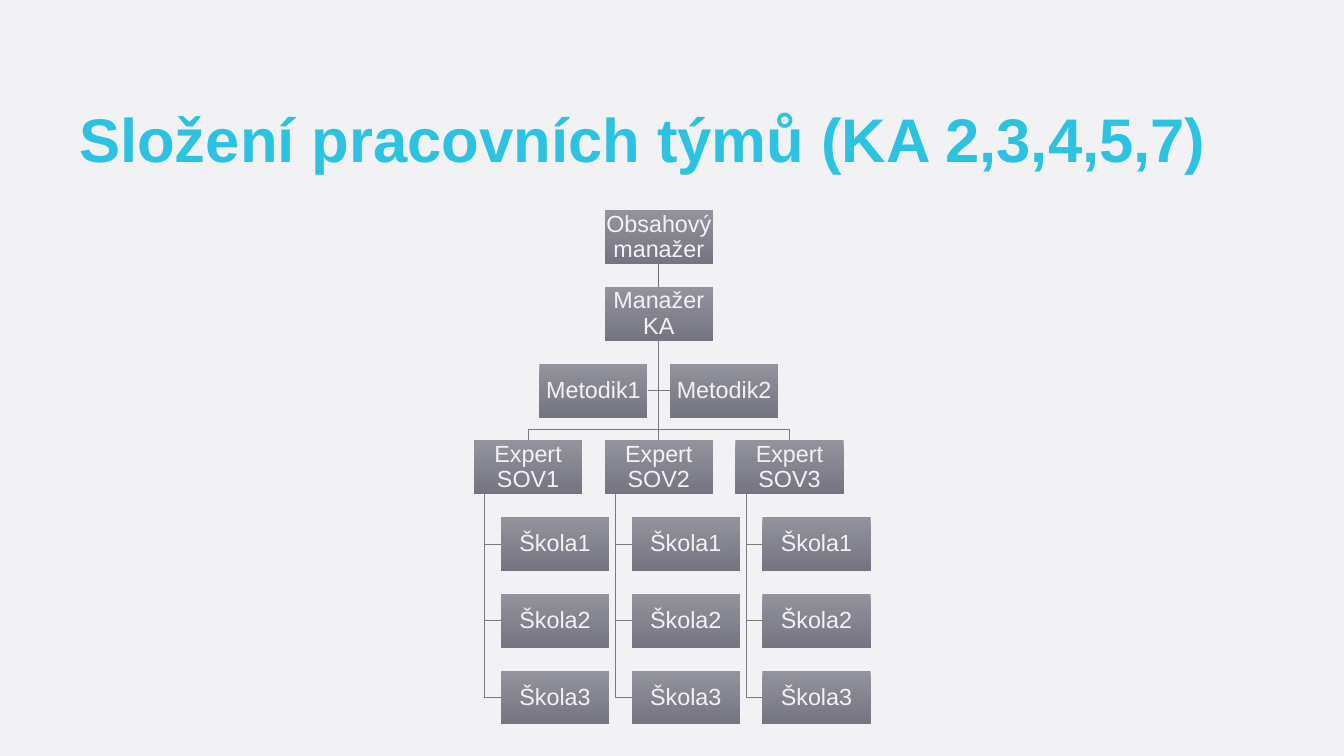
import pptx
import pptx.dml.color
import pptx.enum.shapes
import pptx.enum.text
import pptx.oxml.xmlchemy
import pptx.util
from pptx.util import Cm, Pt

COLORS = {
    "background": "F2F2F5",
    "title": "2BC3E1",
    "box_top": "93939D",
    "box_bottom": "757582",
    "box_text": "F2F2F5",
    "line": "797984",
    "top_line": "6B6B74",
}
ALIGN = pptx.enum.text.PP_ALIGN
ANCHOR = pptx.enum.text.MSO_ANCHOR

TITLE_FRAME = {
    "word_wrap": True, "vertical_anchor": ANCHOR.TOP,
    "margin_left": Cm(0.46), "margin_right": Cm(0.46),
    "margin_top": Cm(0.23), "margin_bottom": Cm(0.23),
}
BOX_FRAME = {
    "word_wrap": True, "vertical_anchor": ANCHOR.MIDDLE,
    "margin_left": Cm(0.04), "margin_right": Cm(0.04),
    "margin_top": Cm(0.04), "margin_bottom": Cm(0.04),
}
TITLE_PARAGRAPH = {"alignment": ALIGN.LEFT, "line_spacing": 0.9}
BOX_PARAGRAPH = {"alignment": ALIGN.CENTER, "line_spacing": 0.9}
TITLE_FONT = {"name": "Arial", "size": Pt(66), "bold": True}
BOX_FONT = {"name": "Arial", "size": Pt(25), "bold": False}

# Chart grid, in centimetres
BOX_W, BOX_H = 4.09, 2.04
COL_STEP, ROW_STEP = 4.94, 2.9
CENTER_X, TOP = 24.9, 7.95
BUS_GAP = 0.43
STEM_INDENT, SCHOOL_INDENT = 0.41, 1.02


def rgb(name):
    return pptx.dml.color.RGBColor.from_string(COLORS[name])


def set_all(obj, values):
    for key, value in values.items():
        setattr(obj, key, value)


def row_top(row):
    return TOP + row * ROW_STEP


def col_left(col):
    """Left edge of a box; column 0 is the chart's axis."""
    return CENTER_X - BOX_W / 2 + col * COL_STEP


class OrgChart:
    """Holds the style and the slide being drawn."""

    def __init__(self, slide):
        self.s = slide
        fill = slide.background.fill
        fill.solid()
        fill.fore_color.rgb = rgb("background")

    def add_text(self, sp, text, frame, paragraph, font, color):
        tf = sp.text_frame
        set_all(tf, frame)
        p = tf.paragraphs[0]
        set_all(p, paragraph)
        r = p.add_run()
        r.text = text
        set_all(r.font, font)
        r.font.color.rgb = rgb(color)

    def title(self, text, x, y, w, h):
        sp = self.s.shapes.add_textbox(Cm(x), Cm(y), Cm(w), Cm(h))
        self.add_text(sp, text, TITLE_FRAME, TITLE_PARAGRAPH, TITLE_FONT, "title")

    def box(self, text, x, y):
        sp = self.s.shapes.add_shape(
            pptx.enum.shapes.MSO_SHAPE.RECTANGLE, Cm(x), Cm(y), Cm(BOX_W), Cm(BOX_H))
        sp.shadow.inherit = False
        sp.line.fill.background()
        sp.fill.gradient()
        sp.fill.gradient_angle = 270
        for stop, name in zip(sp.fill.gradient_stops, ("box_top", "box_bottom")):
            stop.color.rgb = rgb(name)
        self.add_text(sp, text, BOX_FRAME, BOX_PARAGRAPH, BOX_FONT, "box_text")
        return sp

    def link(self, upper, lower, color="line"):
        """Straight line from the bottom of one box to the top of another."""
        cx = self.s.shapes.add_connector(
            pptx.enum.shapes.MSO_CONNECTOR.STRAIGHT, 0, 0, 0, 0)
        cx.begin_connect(upper, 2)
        cx.end_connect(lower, 0)
        cx.line.color.rgb = rgb(color)
        cx.line.width = Pt(1)
        cx._element.spPr.append(pptx.oxml.xmlchemy.OxmlElement("a:effectLst"))

    def branch(self, *points):
        """Open line with square corners through the points."""
        start, *rest = [(Cm(x), Cm(y)) for x, y in points]
        builder = self.s.shapes.build_freeform(*start)
        builder.add_line_segments(rest, close=False)
        sp = builder.convert_to_shape()
        sp.shadow.inherit = False
        sp.fill.background()
        sp.line.color.rgb = rgb("line")
        sp.line.width = Pt(1)


def main():
    prs = pptx.Presentation()
    prs.slide_width, prs.slide_height = Cm(50.8), Cm(28.58)
    chart = OrgChart(prs.slides.add_slide(prs.slide_layouts[6]))
    chart.title("Složení pracovních týmů (KA 2,3,4,5,7)", 2.54, 3.91, 45.72, 4.45)

    director = chart.box("Obsahový manažer", col_left(0), row_top(0))
    manager = chart.box("Manažer KA", col_left(0), row_top(1))
    chart.link(director, manager, "top_line")
    fork = (CENTER_X, row_top(1) + BOX_H)

    for i, side in enumerate((-1, 1), 1):
        x = col_left(side / 2)
        chart.box(f"Metodik{i}", x, row_top(2))
        inner = x + BOX_W if side < 0 else x
        y = row_top(2) + BOX_H / 2
        chart.branch(fork, (CENTER_X, y), (inner, y))

    for i, col in enumerate((-1, 0, 1), 1):
        x, y = col_left(col), row_top(3)
        expert = chart.box(f"Expert SOV{i}", x, y)
        if col == 0:
            chart.link(manager, expert)
        else:
            middle, bus = x + BOX_W / 2, y - BUS_GAP
            chart.branch(fork, (CENTER_X, bus), (middle, bus), (middle, y))

        stem, school_x = x + STEM_INDENT, x + SCHOOL_INDENT
        for n in (1, 2, 3):
            school_y = row_top(3 + n)
            chart.box(f"Škola{n}", school_x, school_y)
            middle = school_y + BOX_H / 2
            chart.branch((stem, y + BOX_H), (stem, middle), (school_x, middle))

    prs.save("out.pptx")


if __name__ == "__main__":
    main()
